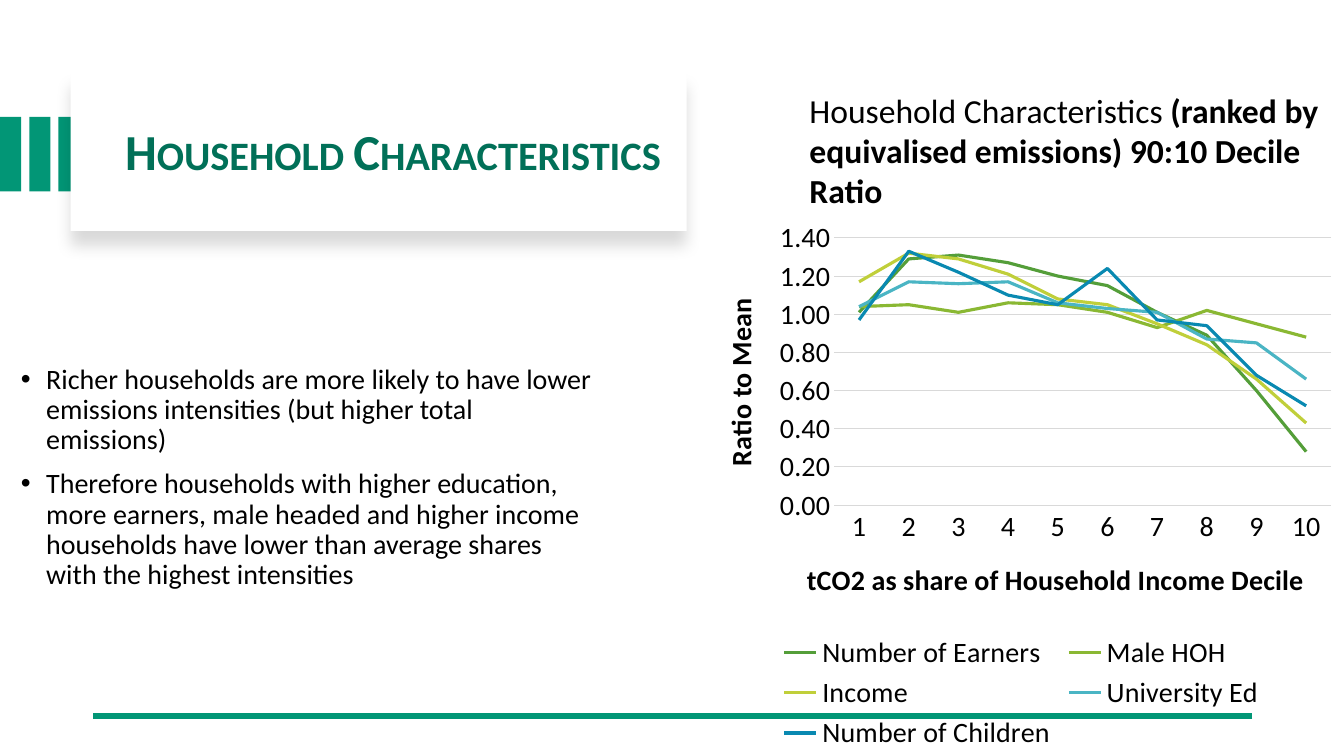
from dataclasses import dataclass

from lxml import etree
from pptx import Presentation
from pptx.chart.data import CategoryChartData
from pptx.dml.color import RGBColor
from pptx.enum.chart import XL_CHART_TYPE, XL_LEGEND_POSITION, XL_MARKER_STYLE, XL_TICK_MARK
from pptx.enum.shapes import MSO_CONNECTOR, MSO_SHAPE
from pptx.enum.text import MSO_ANCHOR, MSO_AUTO_SIZE, PP_ALIGN
from pptx.oxml import parse_xml
from pptx.oxml.ns import nsdecls, qn
from pptx.util import Emu, Pt

LINE = XL_CHART_TYPE.LINE
BOTTOM = XL_LEGEND_POSITION.BOTTOM
NO_MARK = XL_MARKER_STYLE.NONE
NO_TICK = XL_TICK_MARK.NONE
STRAIGHT = MSO_CONNECTOR.STRAIGHT
RECT = MSO_SHAPE.RECTANGLE
MIDDLE = MSO_ANCHOR.MIDDLE
NO_FIT = MSO_AUTO_SIZE.NONE
LEFT = PP_ALIGN.LEFT

FONT = "Calibri"
GREEN, DARK, BLACK, WHITE, GREY = "029676", "017058", "000000", "FFFFFF", "D9D9D9"
BAR_STEP = 29
HEADING = ("Household Characteristics", " (ranked by equivalised emissions) 90:10 Decile Ratio")
POINTS = (
    "Richer households are more likely to have lower emissions intensities "
    "(but higher total emissions)",
    "Therefore households with higher education, more earners, male headed and higher "
    "income households have lower than average shares with the highest intensities",
)


@dataclass
class Box:
    left: int
    top: int
    width: int
    height: int

    def emu(self) -> tuple[Emu, Emu, Emu, Emu]:
        return px(self.left), px(self.top), px(self.width), px(self.height)


@dataclass
class Series:
    name: str
    color: str
    values: tuple[float, ...]


SERIES = (
    Series("Number of Earners", "549E39",
           (1.01, 1.29, 1.31, 1.27, 1.2, 1.15, 1.01, 0.89, 0.6, 0.28)),
    Series("Male HOH", "8AB833",
           (1.04, 1.05, 1.01, 1.06, 1.05, 1.01, 0.93, 1.02, 0.95, 0.88)),
    Series("Income", "C0CF3A",
           (1.17, 1.32, 1.29, 1.21, 1.08, 1.05, 0.95, 0.84, 0.66, 0.43)),
    Series("University Ed", "4AB5C4",
           (1.04, 1.17, 1.16, 1.17, 1.06, 1.03, 1.01, 0.87, 0.85, 0.66)),
    Series("Number of Children", "0989B1",
           (0.97, 1.33, 1.22, 1.1, 1.05, 1.24, 0.97, 0.94, 0.68, 0.52)),
)


def px(count: int) -> Emu:
    """Convert px to EMU at 100 px to the inch."""
    return Emu(count * 9144)


def rgb(code: str) -> RGBColor:
    return RGBColor.from_string(code)


def style(font, size: int, color: str = BLACK, bold: bool = False) -> None:
    font.name, font.size, font.bold = FONT, Pt(size), bold
    font.color.rgb = rgb(color)


def stroke(line, color: str, width: float) -> None:
    line.color.rgb = rgb(color)
    line.width = Pt(width)


def add_rect(slide, box: Box, color: str):
    shape = slide.shapes.add_shape(RECT, *box.emu())
    shape.shadow.inherit = False
    shape.fill.solid()
    shape.fill.fore_color.rgb = rgb(color)
    shape.line.fill.background()
    return shape


def add_shade(shape) -> None:
    """Give the shape a soft shadow that falls straight down."""
    effects = shape.element.spPr.find(qn("a:effectLst"))
    effects.append(parse_xml(
        f'<a:outerShdw {nsdecls("a")} blurRad="{Pt(11)}" dist="{Pt(10)}" dir="5400000" '
        f'algn="t" rotWithShape="0"><a:srgbClr val="{BLACK}"><a:alpha val="15000"/>'
        '</a:srgbClr></a:outerShdw>'))


def set_title(slide, card) -> None:
    title = slide.shapes.title
    card.element.addnext(title.element)
    title.left, title.top, title.width, title.height = Box(114, 96, 579, 113).emu()
    frame = title.text_frame
    frame.text = "Household Characteristics"
    frame.auto_size, frame.vertical_anchor = NO_FIT, MIDDLE
    para = frame.paragraphs[0]
    para.alignment, para.line_spacing = LEFT, 0.9
    style(para.runs[0].font, 36, DARK, True)
    para.runs[0].font._element.set("cap", "small")


def add_text(slide, box: Box):
    frame = slide.shapes.add_textbox(*box.emu()).text_frame
    frame.word_wrap = True
    return frame


def add_points(slide) -> None:
    frame = add_text(slide, Box(11, 273, 587, 402))
    frame.vertical_anchor = MIDDLE
    frame.text = "\n".join(POINTS)
    for para in frame.paragraphs:
        para.line_spacing, para.space_before = 0.9, Pt(10)
        props = para._p.get_or_add_pPr()
        props.set("marL", str(px(25)))
        props.set("indent", str(-px(25)))
        etree.SubElement(props, qn("a:buFont")).set("typeface", "Arial")
        etree.SubElement(props, qn("a:buChar")).set("char", "•")
        style(para.runs[0].font, 20)


def add_heading(slide) -> None:
    para = add_text(slide, Box(793, 84, 540, 131)).paragraphs[0]
    for part, bold in zip(HEADING, (False, True)):
        run = para.add_run()
        run.text = part
        style(run.font, 24, bold=bold)


def add_rule(slide) -> None:
    rule = slide.shapes.add_connector(STRAIGHT, px(1242), px(710), px(92), px(710))
    stroke(rule.line, GREEN, 4.5)
    etree.SubElement(rule.element.spPr, qn("a:effectLst"))


def name_axis(axis, text: str) -> None:
    frame = axis.axis_title.text_frame
    frame.text = text
    style(frame.paragraphs[0].runs[0].font, 20, bold=True)
    axis.major_tick_mark = axis.minor_tick_mark = NO_TICK


def place_plot(chart) -> None:
    """Fix the inner plot area as shares of the chart frame."""
    area = chart._chartSpace.chart.plotArea
    for old in area.findall(qn("c:layout")):
        area.remove(old)
    shares = "".join(f'<c:{key} val="{val}"/>' for key, val in
                     (("x", 0.21), ("y", 0.05), ("w", 0.77), ("h", 0.49)))
    area.insert(0, parse_xml(
        f'<c:layout {nsdecls("c")}><c:manualLayout><c:layoutTarget val="inner"/>'
        f'<c:xMode val="edge"/><c:yMode val="edge"/>{shares}</c:manualLayout></c:layout>'))


def add_graph(slide) -> None:
    data = CategoryChartData(number_format="0.00")
    data.categories = [str(num) for num in range(1, 11)]
    for item in SERIES:
        data.add_series(item.name, item.values)
    chart = slide.shapes.add_chart(LINE, *Box(693, 209, 640, 541).emu(), data).chart
    style(chart.font, 20)
    chart.has_title = False
    chart.has_legend = True
    chart.legend.position, chart.legend.include_in_layout = BOTTOM, False
    plot = chart.plots[0]
    plot.vary_by_categories = False
    for line, item in zip(plot.series, SERIES):
        line.smooth = False
        line.marker.style = NO_MARK
        stroke(line.format.line, item.color, 2.25)
    name_axis(chart.category_axis, "tCO2 as share of Household Income Decile")
    stroke(chart.category_axis.format.line, GREY, 0.75)
    scale = chart.value_axis
    name_axis(scale, "Ratio to Mean")
    scale.minimum_scale, scale.maximum_scale, scale.major_unit = 0, 1.4, 0.2
    scale.tick_labels.number_format = "0.00"
    scale.tick_labels.number_format_is_linked = False
    scale.format.line.fill.background()
    stroke(scale.major_gridlines.format.line, GREY, 0.75)
    place_plot(chart)


def main() -> None:
    deck = Presentation()
    deck.slide_width, deck.slide_height = px(1333), px(750)
    slide = deck.slides.add_slide(deck.slide_layouts.get_by_name("Title Only"))
    for num in range(3):
        add_rect(slide, Box(num * BAR_STEP, 116, 21, 74), GREEN)
    card = add_rect(slide, Box(70, 72, 611, 157), WHITE)
    add_shade(card)
    set_title(slide, card)
    add_points(slide)
    add_rule(slide)
    add_heading(slide)
    add_graph(slide)
    deck.save("out.pptx")


if __name__ == "__main__":
    main()
